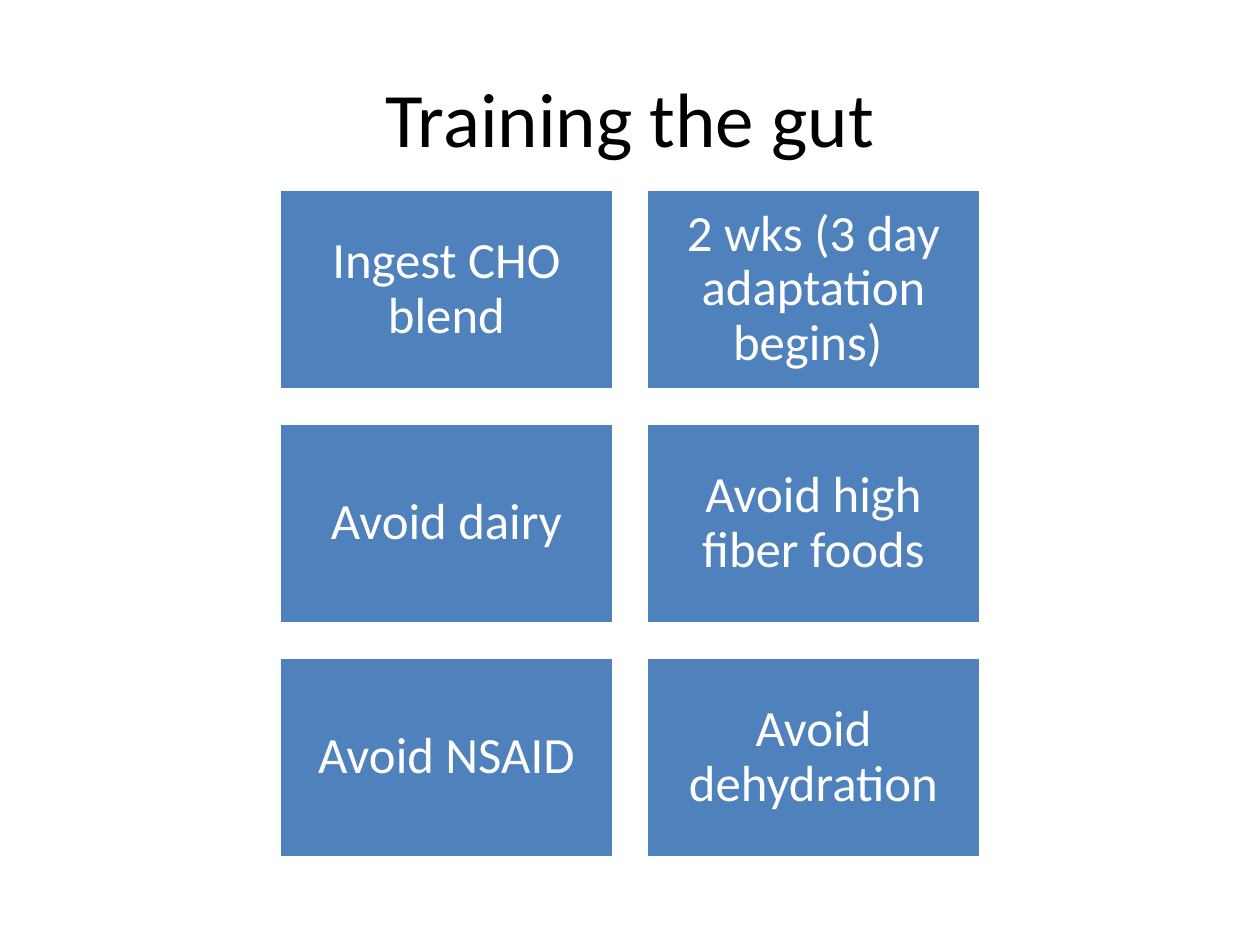
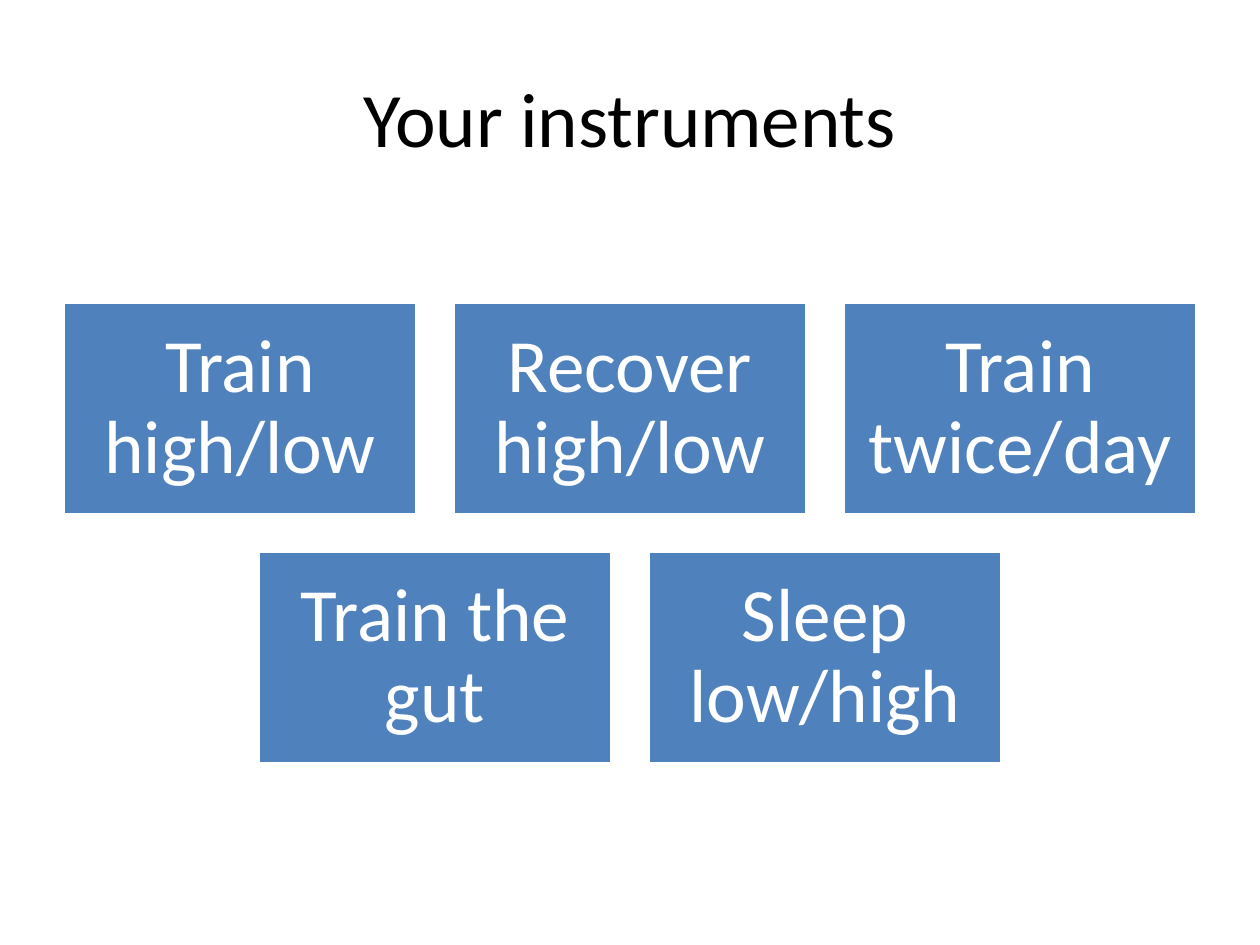
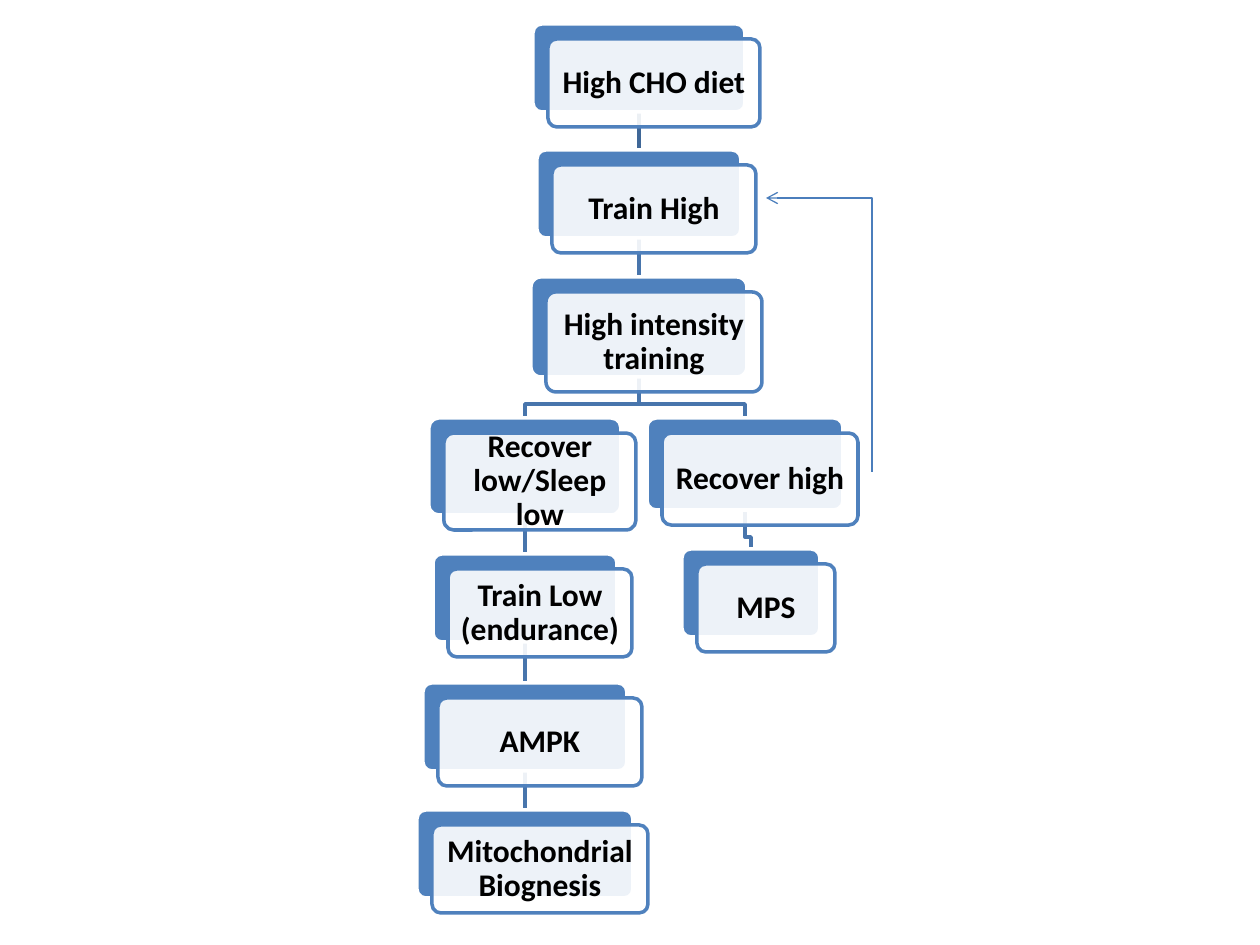
from dataclasses import dataclass

from lxml import etree
from pptx import Presentation
from pptx import util as u
from pptx.dml.color import RGBColor
from pptx.enum import shapes, text
from pptx.oxml import ns

PX = 914400 / 126


@dataclass(frozen=True)
class Theme:
    font: str = "Calibri"
    ink: str = "000000"
    paper: str = "FFFFFF"
    accent: str = "4F81BD"
    link: str = "4875AC"
    root_link: str = "3F6797"
    loop: str = "4B7EBC"
    title_size: int = 44
    card_size: int = 18
    line: float = 2
    thin_line: float = 0.75


T = Theme()


def px(n):
    return u.Emu(round(n * PX))


def rgb(color):
    return RGBColor.from_string(color)


def sub(parent, tag, **attrs):
    return etree.SubElement(parent, ns.qn(tag), **attrs)


def outline(sp, color, width):
    sp.line.color.rgb = rgb(color)
    sp.line.width = u.Pt(width)


def write(sp, words, size, color, bold=False, inset=None, spacing=None):
    tf = sp.text_frame
    tf.word_wrap = True
    tf.vertical_anchor = text.MSO_ANCHOR.MIDDLE
    if inset is not None:
        tf.margin_left = tf.margin_right = px(inset)
        tf.margin_top = tf.margin_bottom = px(inset)
    p = tf.paragraphs[0]
    p.alignment = text.PP_ALIGN.CENTER
    if spacing:
        p.line_spacing = spacing
    r = p.add_run()
    r.text = words
    r.font.name = T.font
    r.font.size = u.Pt(size)
    r.font.bold = bold
    r.font.color.rgb = rgb(color)


def add_box(slide, kind, x, y, w, h, fill, line):
    sp = slide.shapes.add_shape(kind, px(x), px(y), px(w), px(h))
    sp.shadow.inherit = False
    sp.fill.solid()
    sp.fill.fore_color.rgb = rgb(fill)
    outline(sp, line, T.line)
    return sp


def add_line(slide, kind, x1, y1, x2, y2, color, width):
    cn = slide.shapes.add_connector(kind, px(x1), px(y1), px(x2), px(y2))
    outline(cn, color, width)
    sub(cn._element.spPr, "a:effectLst")
    return cn


def add_title(slide, box, words):
    sp = slide.shapes.add_textbox(*map(px, box))
    write(sp, words, T.title_size, T.ink)


def add_tiles(slide, box, rows, tile, gap, size, inset):
    x, y, width = box
    w, h = tile
    for i, row in enumerate(rows):
        row_width = len(row) * (w + gap) - gap
        left = x + (width - row_width) / 2
        for j, words in enumerate(row):
            sp = add_box(slide, shapes.MSO_SHAPE.RECTANGLE, left + j * (w + gap),
                         y + i * (h + gap), w, h, T.accent, T.paper)
            write(sp, words, size, T.paper, inset=inset, spacing=0.9)


def add_card(slide, x, y, w, h, words):
    shift = 15
    kind = shapes.MSO_SHAPE.ROUNDED_RECTANGLE
    back = add_box(slide, kind, x, y, w, h, T.accent, T.paper)
    front = add_box(slide, kind, x + shift, y + shift, w, h, T.paper, T.accent)
    for sp in (back, front):
        sp.adjustments[0] = 0.1
    color = front._element.spPr.find(ns.qn("a:solidFill"))[0]
    sub(color, "a:alpha", val="90000")
    write(front, words, T.card_size, T.ink, bold=True, inset=9, spacing=0.9)
    return back


def add_elbow(slide, x1, y1, x2, y2, color):
    bend = y1 + 27
    path_builder = slide.shapes.build_freeform(x1, y1, scale=PX)
    path_builder.add_line_segments([(x1, bend), (x2, bend), (x2, y2)], close=False)
    sp = path_builder.convert_to_shape()
    sp.shadow.inherit = False
    sp.fill.background()
    outline(sp, color, T.line)
    return sp


def add_loop(slide, x1, y1, x2, y2):
    cn = add_line(slide, shapes.MSO_CONNECTOR.ELBOW, x1, y1, x2, y2, T.loop, T.thin_line)
    guides = cn._element.spPr.find(ns.qn("a:prstGeom")).get_or_add_avLst()
    sub(guides, "a:gd", name="adj1", fmla="val 100000")
    sub(cn.line._get_or_add_ln(), "a:headEnd", type="arrow")


def add_flow(slide, box, cards, links, loop):
    x, y = box
    backs = {}
    for name, (center, top, w, h) in cards.items():
        backs[name] = add_card(slide, x + center - w / 2, y + top, w, h, name)
    for i, (parent, child) in enumerate(links):
        color = T.link if i else T.root_link
        center, top, _, h = cards[parent]
        child_center, child_top = cards[child][:2]
        ends = x + center, y + top + h, x + child_center, y + child_top
        if center == child_center:
            link = add_line(slide, shapes.MSO_CONNECTOR.STRAIGHT, *ends, color, T.line)
            link.begin_connect(backs[parent], 2)
            link.end_connect(backs[child], 0)
        else:
            link = add_elbow(slide, *ends, color)
        slide.shapes._spTree.insert(2, link._element)
    x1, y1, x2, y2 = loop
    add_loop(slide, x + x1, y + y1, x + x2, y + y2)


def tile_slide(slide, title, **tiles):
    add_title(slide, (63, 38, 1134, 158), title)
    add_tiles(slide, **tiles)


def flow_slide(slide):
    trunk, low, high = 222, 108, 328
    cards = {
        "High CHO diet": (trunk, 0, 212, 88),
        "Train High": (trunk, 126, 204, 88),
        "High intensity training": (trunk, 253, 216, 100),
        "Recover low/Sleep low": (low, 394, 192, 97),
        "Train Low (endurance)": (low, 530, 184, 88),
        "AMPK": (low, 659, 204, 88),
        "Mitochondrial Biognesis": (low, 786, 216, 88),
        "Recover high": (high, 394, 196, 92),
        "MPS": (high + 6, 525, 138, 88),
    }
    names = list(cards)
    links = list(zip(names[:6], names[1:7]))
    links += [(names[2], names[7]), (names[7], names[8])]
    add_flow(slide, (417, 24), cards, links, loop=(349, 174, 455, 448))


def main():
    prs = Presentation()
    prs.slide_width, prs.slide_height = px(1260), px(945)
    blank = prs.slide_layouts[6]
    tile_slide(
        prs.slides.add_slide(blank), "Training the gut",
        box=(280, 189, 700), tile=(334, 201), gap=33, size=29, inset=15,
        rows=[["Ingest CHO blend", "2 wks (3 day adaptation begins) "],
              ["Avoid dairy", "Avoid high fiber foods"],
              ["Avoid NSAID", "Avoid dehydration"]])
    tile_slide(
        prs.slides.add_slide(blank), "Your instruments",
        box=(63, 302, 1134), tile=(354, 213), gap=36, size=43, inset=23,
        rows=[["Train high/low", "Recover high/low", "Train twice/day"],
              ["Train the gut", "Sleep low/high"]])
    flow_slide(prs.slides.add_slide(blank))
    prs.save("out.pptx")


if __name__ == "__main__":
    main()
